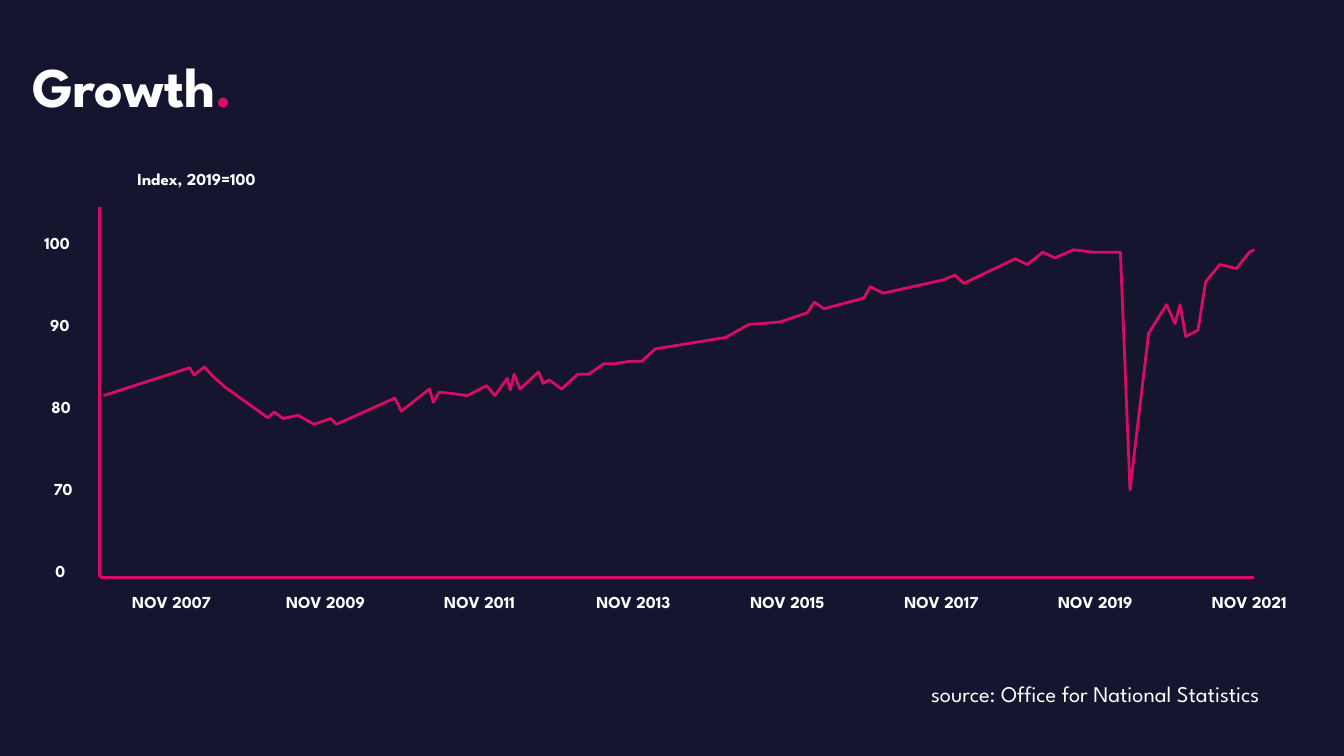
from itertools import chain

from pptx import Presentation
from pptx.dml.color import RGBColor
from pptx.enum.shapes import MSO_CONNECTOR
from pptx.enum.text import MSO_ANCHOR, MSO_AUTO_SIZE, PP_ALIGN
from pptx.oxml.ns import qn
from pptx.util import Cm, Pt
from lxml import etree

STRAIGHT = MSO_CONNECTOR.STRAIGHT
TOP = MSO_ANCHOR.TOP
FIXED = MSO_AUTO_SIZE.NONE
LEFT, CENTER = PP_ALIGN.LEFT, PP_ALIGN.CENTER

FONT = "League Spartan"
NAVY, PINK, WHITE = "15152F", "D90B64", "FFFFFF"

YEARS = range(2007, 2022, 2)
MARKS = {"100": 1.44, "90": 1.51, "80": 1.54, "70": 1.59, "0": 1.52}

COL, ROW = Cm(3.88), Cm(2.065)
WIDE, HIGH = Cm(3.63), Cm(1.09)
MONTH, POINT = COL / 24, ROW / 10
TOP_MARK, TOP_GAP = 100, Cm(0.94)

INDEX_BY_MONTH = {
    "boom": [(-10.6, 81.5), (2.8, 84.9), (3.5, 84.0), (5.1, 85.0)],
    "slump": [
        (6.5, 83.8), (8.4, 82.5), (15.0, 78.8), (16.0, 79.5), (17.4, 78.7),
        (19.7, 79.1), (22.2, 78.0), (24.8, 78.7), (25.7, 78.0)],
    "repair": [
        (34.8, 81.2), (35.8, 79.6), (40.2, 82.3), (40.8, 80.7), (41.7, 81.9),
        (43.3, 81.8), (46.1, 81.5), (49.1, 82.7), (50.4, 81.5), (52.3, 83.6),
        (52.8, 82.2), (53.4, 84.1), (54.3, 82.3), (57.2, 84.4), (57.9, 83.0),
        (58.9, 83.4), (60.8, 82.3)],
    "climb": [
        (63.3, 84.1), (65.0, 84.1), (67.4, 85.4), (69.1, 85.4), (71.5, 85.7),
        (73.3, 85.7), (75.4, 87.2), (86.4, 88.6), (90.0, 90.2), (92.1, 90.3),
        (94.9, 90.5), (99.1, 91.6), (100.2, 92.9), (101.7, 92.1),
        (107.9, 93.4), (108.9, 94.8), (110.9, 94.0), (120.2, 95.6),
        (122.1, 96.2), (123.5, 95.2), (131.5, 98.2), (133.4, 97.5),
        (135.8, 99.0), (137.7, 98.3), (140.6, 99.3), (143.6, 99.0),
        (147.9, 99.0)],
    "crash": [(149.4, 70.0)],
    "rebound": [
        (152.3, 89.1), (155.1, 92.6), (156.4, 90.3), (157.2, 92.6),
        (158.1, 88.7), (160.0, 89.5), (161.2, 95.4), (163.4, 97.5),
        (166.0, 97.0), (168.0, 99.0), (168.8, 99.3)],
}


def color(code):
    return RGBColor.from_string(code)


def style(run, size, bold, code=WHITE):
    run.font.name = FONT
    run.font.size = Pt(size)
    run.font.bold = bold
    run.font.color.rgb = color(code)


def label(slide, text, box, size=12, bold=True):
    frame = slide.shapes.add_textbox(*box).text_frame
    frame.word_wrap = False
    frame.text = text
    line = frame.paragraphs[0]
    line.alignment = CENTER
    style(line.runs[0], size, bold)


def heading(slide, box):
    title = slide.shapes.title
    title.left, title.top, title.width, title.height = box
    frame = title.text_frame
    frame.auto_size = FIXED
    frame.vertical_anchor = TOP
    frame.text = "Growth"
    line = frame.paragraphs[0]
    line.alignment = LEFT
    style(line.runs[0], 40, True)
    dot = line.add_run()
    dot.text = "."
    style(dot, 40, True, PINK)


def stroke(shape):
    shape.line.color.rgb = color(PINK)
    shape.line.width = Pt(2)


def axis(slide, start, end):
    line = slide.shapes.add_connector(STRAIGHT, *start, *end)
    stroke(line)
    etree.SubElement(line._element.spPr, qn("a:effectLst"))


def trend(slide, left, top):
    start = left + WIDE / 2
    peak = top + TOP_GAP
    spots = [(round(start + month * MONTH),
              round(peak + (TOP_MARK - index) * POINT))
             for month, index in chain(*INDEX_BY_MONTH.values())]
    pen = slide.shapes.build_freeform(*spots[0])
    pen.add_line_segments(spots[1:], close=False)
    curve = pen.convert_to_shape()
    curve.shadow.inherit = False
    curve.fill.background()
    stroke(curve)


def graph(slide, box):
    left, top, width, height = box
    base = top + height
    trend(slide, left, top)
    axis(slide, (left, top), (left, base))
    axis(slide, (left, base), (left + width, base))
    label(slide, "Index, 2019=100",
          (left - Cm(0.3), top - Cm(1.08), Cm(5.49), HIGH))
    slim = Cm(1.4)
    for row, (mark, mid) in enumerate(MARKS.items()):
        label(slide, mark, (Cm(mid) - slim // 2,
                            top + Cm(0.53) + row * ROW, slim, HIGH))
    for col, year in enumerate(YEARS):
        label(slide, f"NOV {year}",
              (left + col * COL, base + Cm(0.23), WIDE, HIGH))


def main():
    deck = Presentation()
    deck.slide_width, deck.slide_height = Cm(33.87), Cm(19.05)
    slide = deck.slides.add_slide(deck.slide_layouts[5])
    slide.background.fill.solid()
    slide.background.fill.fore_color.rgb = color(NAVY)
    heading(slide, (Cm(0.56), Cm(1.17), Cm(15.37), Cm(1.96)))
    graph(slide, (Cm(2.51), Cm(5.21), Cm(29.09), Cm(9.34)))
    label(slide, "source: Office for National Statistics",
          (Cm(22.5), Cm(17.02), Cm(10.21), Cm(0.94)), 16, False)
    deck.save("out.pptx")


if __name__ == "__main__":
    main()
